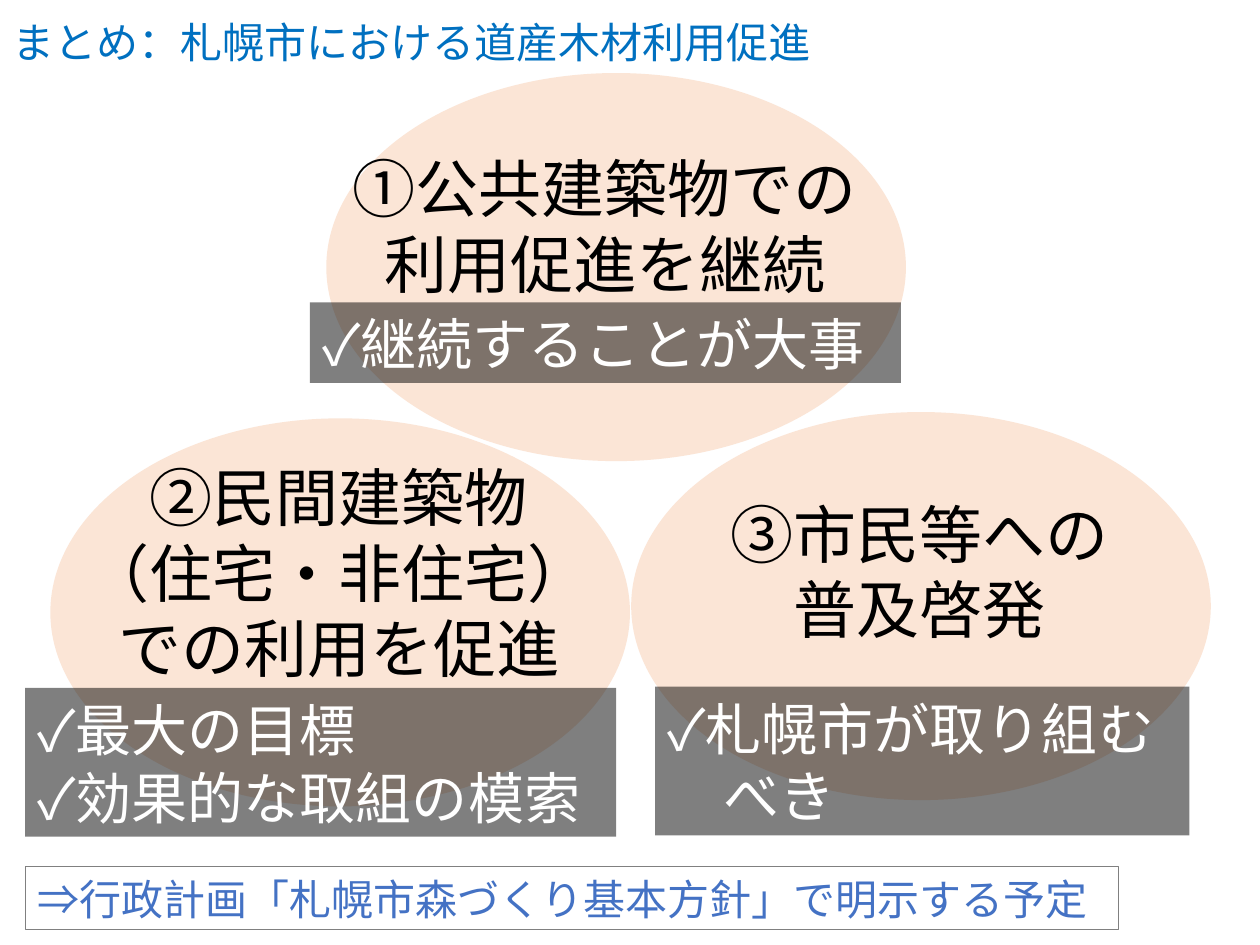
from pptx import Presentation
from pptx import util as u
from pptx.dml.color import RGBColor
from pptx.enum import shapes, text
from pptx.oxml.ns import qn
from lxml import etree

FONT = "Noto Sans CJK JP"
TITLE_BLUE = RGBColor(0x00, 0x70, 0xC0)
NOTE_BLUE = RGBColor(0x44, 0x72, 0xC4)
PEACH = RGBColor(0xFB, 0xE5, 0xD6)
GRAY = RGBColor(0x80, 0x80, 0x80)
BLACK = RGBColor(0x00, 0x00, 0x00)
WHITE = RGBColor(0xFF, 0xFF, 0xFF)
LEFT, CENTER = text.PP_ALIGN.LEFT, text.PP_ALIGN.CENTER

presentation = Presentation()
presentation.slide_width = u.Inches(10)
presentation.slide_height = u.Inches(7.5)
slide = presentation.slides.add_slide(presentation.slide_layouts[6])


def add_plain_shape(kind, box):
    shape = slide.shapes.add_shape(kind, *map(u.Inches, box))
    shape.shadow.inherit = False
    shape.line.fill.background()
    return shape


def write_text(shape, words, size, color, align=LEFT, wrap=True,
               anchor=text.MSO_ANCHOR.TOP):
    frame = shape.text_frame
    frame.text = words
    frame.word_wrap = wrap
    frame.auto_size = text.MSO_AUTO_SIZE.SHAPE_TO_FIT_TEXT
    frame.vertical_anchor = anchor
    for paragraph in frame.paragraphs:
        paragraph.alignment = align
        for run in paragraph.runs:
            run.font.size = u.Pt(size)
            run.font.color.rgb = color
            run.font.name = FONT
            # East Asian typeface
            etree.SubElement(run.font._element, qn("a:ea"), typeface=FONT)


# Title
title = slide.shapes.add_textbox(*map(u.Inches, (0, 0.08, 6.6, 0.5)))
write_text(title, "まとめ：札幌市における道産木材利用促進", 24, TITLE_BLUE, wrap=False)

# Ellipses behind the three themes
for left, top in [(2.59, 0.58), (0.4, 3.32), (5.01, 3.27)]:
    ellipse = add_plain_shape(shapes.MSO_SHAPE.OVAL, (left, top, 4.6, 3.08))
    ellipse.fill.solid()
    ellipse.fill.fore_color.rgb = PEACH

# Half-transparent bands with check points
bands = [
    ((2.46, 2.4, 4.69, 0.64), "✓継続することが大事"),
    ((0.2, 5.46, 4.69, 1.18), "✓最大の目標\n✓効果的な取組の模索"),
    ((5.2, 5.45, 4.24, 1.18), "✓札幌市が取り組む\n　べき"),
]
for box, words in bands:
    band = add_plain_shape(shapes.MSO_SHAPE.RECTANGLE, box)
    band.fill.solid()
    band.fill.fore_color.rgb = BLACK
    color = band._element.spPr.find(qn("a:solidFill"))[0]
    etree.SubElement(color, qn("a:alpha"), val="50000")
    write_text(band, words, 32, WHITE, wrap=False, anchor=text.MSO_ANCHOR.BOTTOM)

# Theme headings
headings = [
    ((2.51, 1.14, 4.58, 1.31), "①公共建築物での\n利用促進を継続"),
    ((0.4, 3.59, 4.58, 1.92), "②民間建築物\n（住宅・非住宅）\nでの利用を促進"),
    ((4.98, 3.88, 4.64, 1.31), "③市民等への\n普及啓発"),
]
for box, words in headings:
    heading = slide.shapes.add_textbox(*map(u.Inches, box))
    write_text(heading, words, 36, BLACK, CENTER)

# Closing note
note = add_plain_shape(shapes.MSO_SHAPE.RECTANGLE, (0.2, 6.88, 8.68, 0.5))
note.fill.background()
note.line.color.rgb = GRAY
note.line.width = u.Pt(0.75)
write_text(note, "⇒行政計画「札幌市森づくり基本方針」で明示する予定", 24, NOTE_BLUE,
           anchor=text.MSO_ANCHOR.BOTTOM)

presentation.save("out.pptx")
